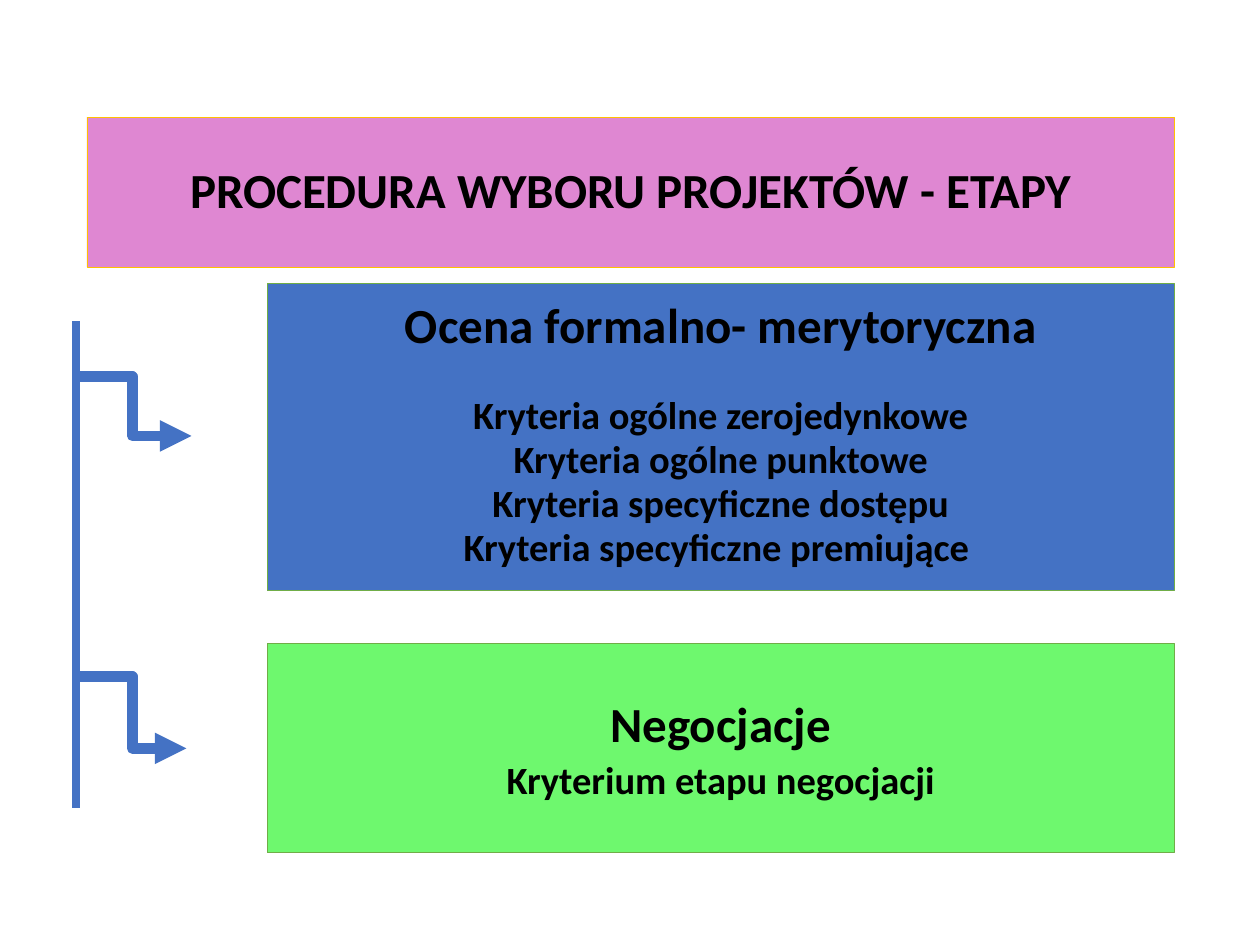
"""Build a slide showing the stages of project selection."""
from dataclasses import dataclass

from lxml import etree
from pptx import Presentation
from pptx.dml.color import RGBColor
from pptx.enum import shapes, text
from pptx.oxml import ns
from pptx.util import Inches, Pt


@dataclass(frozen=True)
class Theme:
    font: str = "Calibri"
    ink: str = "000000"
    pink: str = "DF87D2"
    blue: str = "4472C4"
    lime: str = "6EF86E"
    gold: str = "FFC000"
    green: str = "70AD47"
    head: int = 28
    item: int = 22
    edge: float = 0.5


@dataclass(frozen=True)
class Line:
    words: str
    size: int
    pitch: float
    before: float = 0


@dataclass(frozen=True)
class Panel:
    top: float
    left: float
    high: float
    fill: str
    edge: str
    lines: tuple[Line, ...]


@dataclass(frozen=True)
class Link:
    start: tuple[float, float]
    end: tuple[float, float]
    width: float
    bent: bool = True


LOOK = Theme()
RIGHT = 9.32
TITLE = Panel(0.93, 0.69, 1.19, LOOK.pink, LOOK.gold, (
    Line("PROCEDURA WYBORU PROJEKTÓW - ETAPY", LOOK.head, 0.9),))
REVIEW = Panel(2.25, 2.12, 2.44, LOOK.blue, LOOK.green, (
    Line("Ocena formalno- merytoryczna", LOOK.head, 0.8),
    Line("Kryteria ogólne zerojedynkowe", LOOK.item, 0.8, 27),
    Line("Kryteria ogólne punktowe", LOOK.item, 0.8, 4),
    Line("Kryteria specyficzne dostępu", LOOK.item, 0.8, 4),
    Line("Kryteria specyficzne premiujące ", LOOK.item, 0.8, 4)))
TALKS = Panel(5.11, 2.12, 1.66, LOOK.lime, LOOK.green, (
    Line("Negocjacje", LOOK.head, 1),
    Line("Kryterium etapu negocjacji", LOOK.item, 0.9, 5)))
LINKS = (
    Link((0.6, 2.55), (0.6, 6.41), 4.5, False),
    Link((0.58, 2.99), (1.52, 3.46), 6),
    Link((0.62, 5.37), (1.48, 5.94), 6))


def write(para, line: Line) -> None:
    """Fill a centred paragraph without a bullet."""
    para.text = line.words
    para.alignment = text.PP_ALIGN.CENTER
    para.line_spacing = line.pitch
    para.space_before = Pt(line.before)
    props = para._p.get_or_add_pPr()
    props.set("marL", "0")
    props.set("indent", "0")
    etree.SubElement(props, ns.qn("a:buNone"))
    font = para.font
    font.name, font.size, font.bold = LOOK.font, Pt(line.size), True
    font.color.rgb = RGBColor.from_string(LOOK.ink)


def dress(shape, panel: Panel) -> None:
    """Place, colour and fill a panel."""
    shape.left, shape.top = Inches(panel.left), Inches(panel.top)
    shape.width, shape.height = Inches(RIGHT - panel.left), Inches(panel.high)
    shape.shadow.inherit = False
    shape.fill.solid()
    shape.fill.fore_color.rgb = RGBColor.from_string(panel.fill)
    shape.line.color.rgb = RGBColor.from_string(panel.edge)
    shape.line.width = Pt(LOOK.edge)
    frame = shape.text_frame
    frame.word_wrap = True
    frame.auto_size = text.MSO_AUTO_SIZE.NONE
    frame.vertical_anchor = text.MSO_ANCHOR.MIDDLE
    for count, line in enumerate(panel.lines):
        write(frame.add_paragraph() if count else frame.paragraphs[0], line)


def join(slide, link: Link) -> None:
    """Draw the trunk line or a bent arrow."""
    kind = shapes.MSO_CONNECTOR.ELBOW if link.bent else shapes.MSO_CONNECTOR.STRAIGHT
    ends = [Inches(n) for n in link.start + link.end]
    wire = slide.shapes.add_connector(kind, *ends)
    wire.line.color.rgb = RGBColor.from_string(LOOK.blue)
    wire.line.width = Pt(link.width)
    if link.bent:
        stroke = wire.line._get_or_add_ln()
        etree.SubElement(stroke, ns.qn("a:tailEnd"), type="triangle")
    etree.SubElement(wire._element.spPr, ns.qn("a:effectLst"))


def main() -> None:
    """Assemble and save the slide."""
    deck = Presentation()
    deck.slide_width, deck.slide_height = Inches(10), Inches(7.5)
    slide = deck.slides.add_slide(deck.slide_layouts[1])
    dress(slide.shapes.title, TITLE)
    dress(slide.placeholders[1], REVIEW)
    box = slide.shapes.add_shape(shapes.MSO_SHAPE.RECTANGLE, 0, 0, 0, 0)
    dress(box, TALKS)
    for link in LINKS:
        join(slide, link)
    deck.save("out.pptx")


if __name__ == "__main__":
    main()
